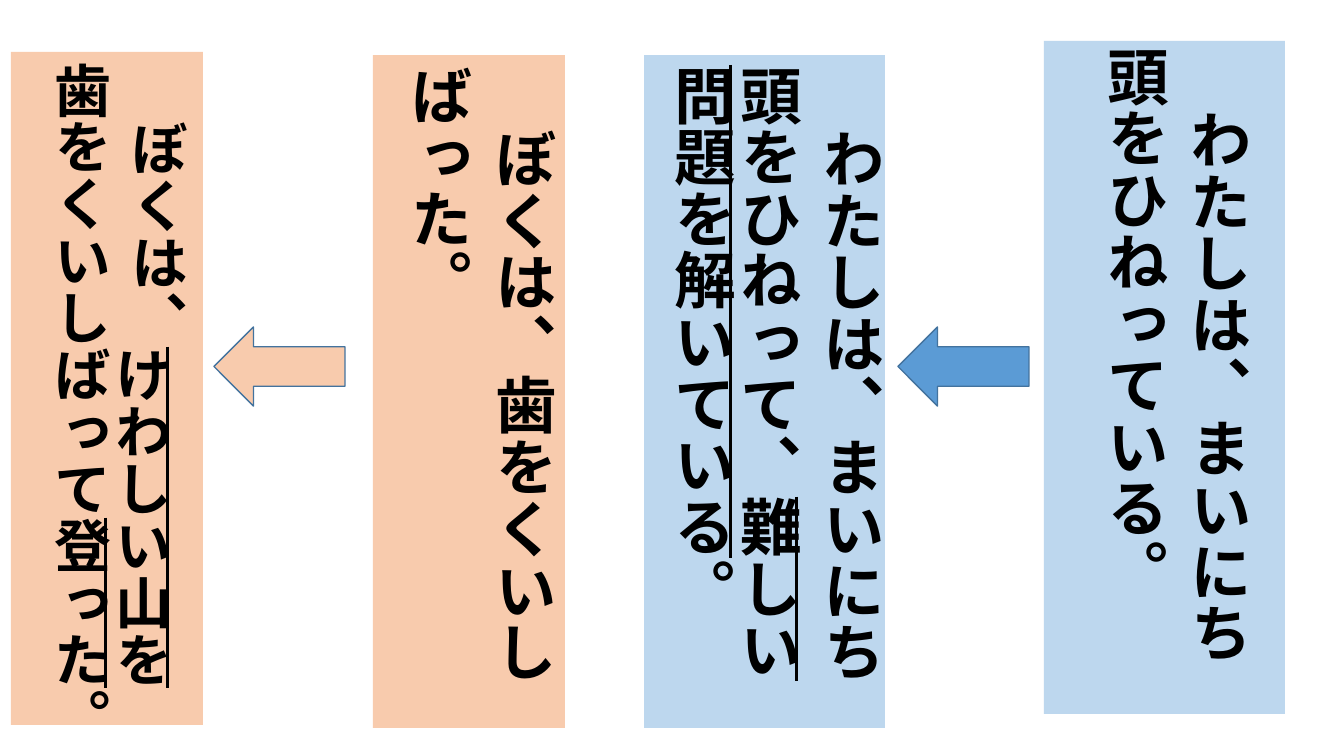
from lxml import etree
from pptx import Presentation
from pptx.dml.color import RGBColor
from pptx.enum.lang import MSO_LANGUAGE_ID as Language
from pptx.enum.shapes import MSO_SHAPE as Preset
from pptx.enum.text import MSO_ANCHOR as Anchor, MSO_AUTO_SIZE as AutoSize, PP_ALIGN as Align
from pptx.oxml.ns import qn
from pptx.util import Emu, Pt

EMU_PER_PX = 914400 / 100.8
FONT = "Arial"
COLORS = {
    "pale_blue": "BDD7EE",
    "blue": "5B9BD5",
    "peach": "F8CBAD",
    "outline": "43739E",
    "text": "000000",
}


def px(length):
    return Emu(round(length * EMU_PER_PX))


def color(name):
    return RGBColor.from_string(COLORS[name])


def fill_shape(shape, fill):
    shape.fill.solid()
    shape.fill.fore_color.rgb = color(fill)


def add_span(para, text, size, underlined):
    span = para.add_run()
    span.text = text
    font = span.font
    font.name = FONT
    font.size = Pt(size)
    font.bold = True
    font.underline = underlined
    font.language_id = Language.JAPANESE
    font.color.rgb = color("text")
    east_asian = etree.Element(qn("a:ea"), typeface=FONT)
    font._element.find(qn("a:latin")).addnext(east_asian)


def write_vertical(shape, spans, size):
    frame = shape.text_frame
    frame.word_wrap = True
    frame.auto_size = AutoSize.NONE
    frame.vertical_anchor = Anchor.MIDDLE
    frame._txBody.find(qn("a:bodyPr")).set("vert", "eaVert")
    para = frame.paragraphs[0]
    para.alignment = Align.LEFT
    para.line_spacing = 0.9
    para.space_before = Pt(0)
    for text, underlined in spans:
        add_span(para, text, size, underlined)


def place_title(page, box, fill, spans, size=44):
    title = page.shapes.title
    title.left, title.top, title.width, title.height = map(px, box)
    fill_shape(title, fill)
    write_vertical(title, spans, size)


def add_panel(page, box, fill, spans, size=44):
    panel = page.shapes.add_shape(Preset.RECTANGLE, *map(px, box))
    panel.shadow.inherit = False
    panel.line.fill.background()
    fill_shape(panel, fill)
    write_vertical(panel, spans, size)


def add_left_arrow(page, box, fill):
    arrow = page.shapes.add_shape(Preset.LEFT_ARROW, *map(px, box))
    arrow.shadow.inherit = False
    fill_shape(arrow, fill)
    arrow.line.color.rgb = color("outline")
    arrow.line.width = Pt(1)


def build_sentence_page(deck):
    page = deck.slides.add_slide(deck.slide_layouts[5])
    place_title(page, (1044, 41, 241, 673), "pale_blue", [
        ("　わたしは、まいにち頭をひねっている。", False),
    ])
    add_panel(page, (644, 55, 241, 673), "pale_blue", [
        ("　わたしは、まいにち頭をひねって、", False),
        ("難しい問題を解いている", True),
        ("。", False),
    ])
    add_left_arrow(page, (898, 327, 131, 79), "blue")
    add_panel(page, (373, 55, 192, 673), "peach", [
        ("　ぼくは、歯をくいしばった。", False),
    ])
    add_left_arrow(page, (214, 327, 131, 79), "peach")
    add_panel(page, (11, 52, 192, 673), "peach", [
        ("　ぼくは、", False),
        ("けわしい山を", True),
        ("歯をくいしばって", False),
        ("登った", True),
        ("。", False),
    ], 40.7)


def main():
    deck = Presentation()
    deck.slide_width, deck.slide_height = px(1344), px(756)
    build_sentence_page(deck)
    deck.save("out.pptx")


if __name__ == "__main__":
    main()
